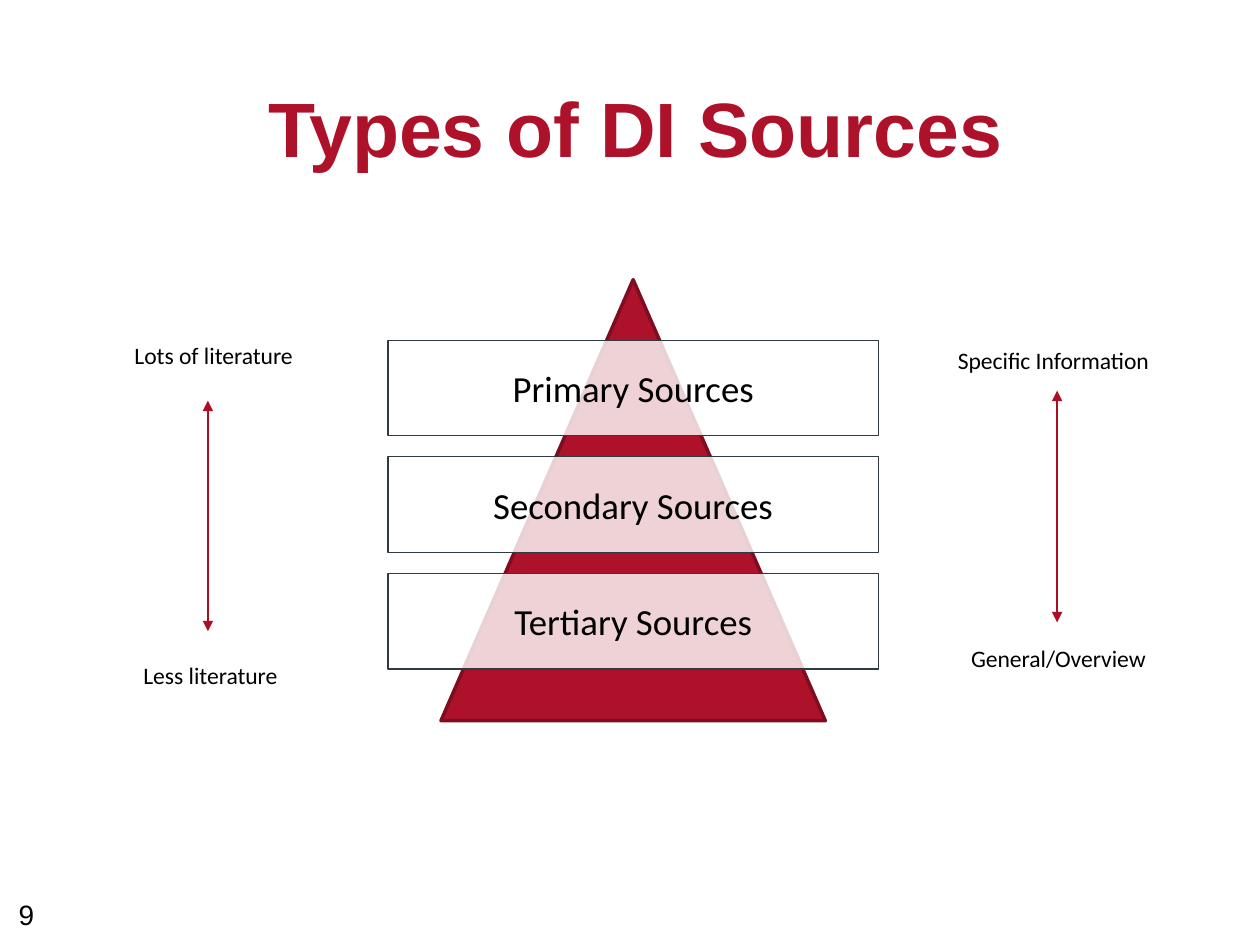
from lxml.etree import SubElement
from pptx import Presentation
from pptx.dml.color import RGBColor
from pptx.enum.shapes import MSO_CONNECTOR, MSO_SHAPE
from pptx.enum.text import MSO_ANCHOR, PP_ALIGN
from pptx.oxml.ns import qn
from pptx.util import Inches, Pt

TITLE = "Types of DI Sources"
SLIDE_NUMBER = "9"
LEVELS = ["Primary Sources", "Secondary Sources", "Tertiary Sources"]
LABELS = [  # text, left, top, width
    ("Specific Information", 7.47, 2.7, 1.78),
    ("General/Overview", 7.47, 5.06, 1.86),
    ("Lots of literature", 0.82, 2.66, 1.75),
    ("Less literature", 0.47, 5.2, 2.4),
]
ARROWS = [(8.39, 3.1, 4.94), (1.65, 3.18, 5.01)]  # x, top, bottom

RED, DARK_RED, ARROW_RED = "AD122A", "800D1F", "AD0E26"
WHITE, BLACK, SLATE = "FFFFFF", "000000", "303B41"
LEVEL_TOP, LEVEL_STEP = 2.7, 0.925


def color(value):
    return RGBColor.from_string(value)


def write(sp, text, size, font="Calibri", fill=BLACK, bold=False,
          align=PP_ALIGN.CENTER, anchor=MSO_ANCHOR.TOP):
    tf = sp.text_frame
    tf.word_wrap = True
    tf.vertical_anchor = anchor
    p = tf.paragraphs[0]
    p.alignment = align
    r = p.add_run()
    r.text = text
    for name, value in {"name": font, "size": Pt(size), "bold": bold}.items():
        setattr(r.font, name, value)
    r.font.color.rgb = color(fill)
    return p


def add_box(s, kind, box, fill, line, width):
    sp = s.shapes.add_shape(kind, *map(Inches, box))
    sp.shadow.inherit = False
    sp.fill.solid()
    sp.fill.fore_color.rgb = color(fill)
    sp.line.color.rgb = color(line)
    sp.line.width = Pt(width)
    return sp


def set_opacity(sp, percent):
    rgb = sp.fill._xPr.find(qn("a:solidFill"))[0]
    SubElement(rgb, qn("a:alpha")).set("val", str(percent * 1000))


def add_double_arrow(s, x, top, bottom):
    c = s.shapes.add_connector(MSO_CONNECTOR.STRAIGHT,
                               *map(Inches, (x, top, x, bottom)))
    c.line.color.rgb = color(ARROW_RED)
    c.line.width = Pt(1.5)
    ln = c.line._get_or_add_ln()
    for end in ("a:headEnd", "a:tailEnd"):
        SubElement(ln, qn(end)).set("type", "triangle")
    SubElement(c._element.spPr, qn("a:effectLst"))


def main():
    prs = Presentation()
    prs.slide_width, prs.slide_height = Inches(10), Inches(7.5)
    s = prs.slides.add_slide(prs.slide_layouts[5])

    title = s.shapes.title
    title.left, title.top, title.width, title.height = map(
        Inches, (0.6, 0.75, 8.89, 0.6))
    title.text_frame.margin_top = title.text_frame.margin_bottom = 0
    p = write(title, TITLE, 44, "Arial", RED, True, anchor=MSO_ANCHOR.MIDDLE)
    p.line_spacing = 0.9

    number = s.shapes.add_textbox(*map(Inches, (0.05, 7.07, 0.55, 0.32)))
    write(number, SLIDE_NUMBER, 16, "Arial", align=PP_ALIGN.LEFT)

    add_box(s, MSO_SHAPE.ISOSCELES_TRIANGLE, (3.5, 2.22, 3.05, 3.5),
            RED, DARK_RED, 2)
    for i, level in enumerate(LEVELS):
        box = (3.08, LEVEL_TOP + i * LEVEL_STEP, 3.89, 0.76)
        sp = add_box(s, MSO_SHAPE.RECTANGLE, box, WHITE, SLATE, 0.75)
        set_opacity(sp, 81)
        write(sp, level, 21, anchor=MSO_ANCHOR.MIDDLE)

    for text, left, top, width in LABELS:
        label = s.shapes.add_textbox(*map(Inches, (left, top, width, 0.33)))
        write(label, text, 13.5)
    for arrow in ARROWS:
        add_double_arrow(s, *arrow)

    prs.save("out.pptx")


if __name__ == "__main__":
    main()
